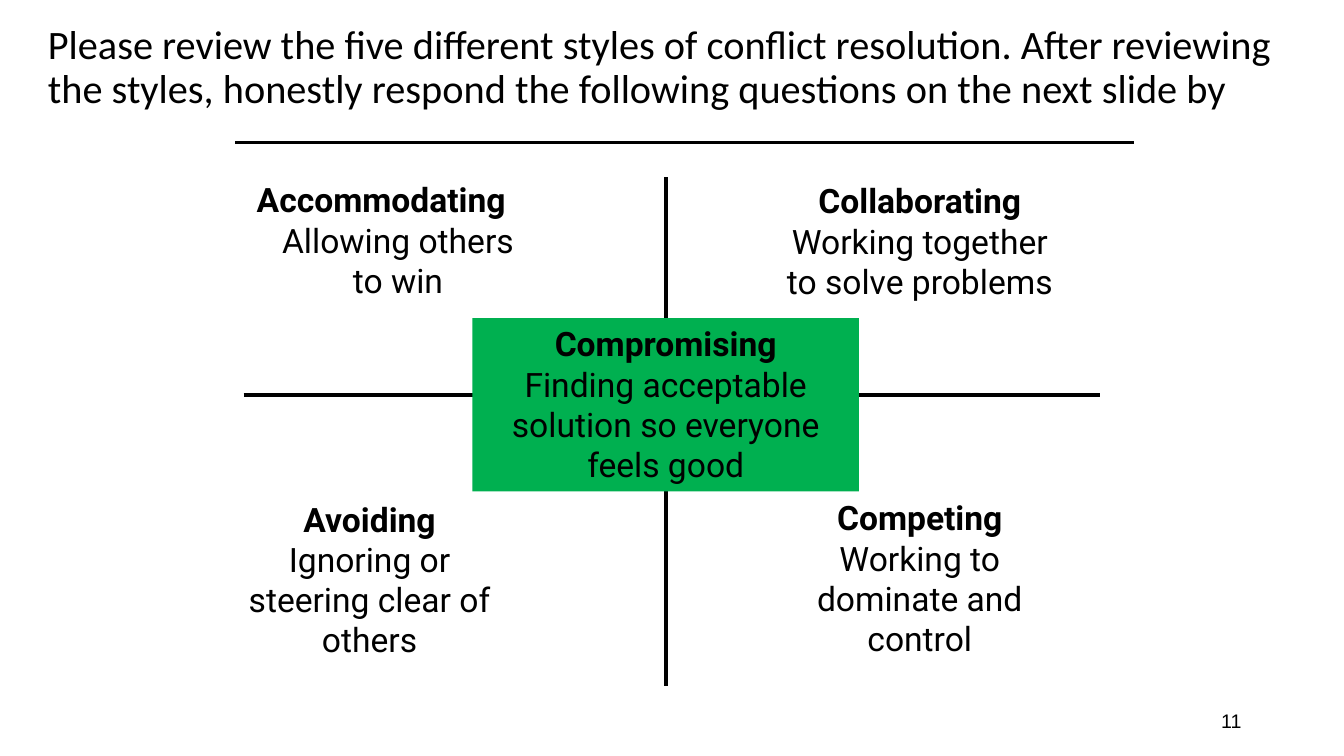
from dataclasses import dataclass

from lxml import etree
from pptx import Presentation
from pptx.dml.color import RGBColor
from pptx.enum.shapes import MSO_CONNECTOR, MSO_SHAPE
from pptx.enum.text import MSO_ANCHOR, MSO_AUTO_SIZE, PP_ALIGN
from pptx.oxml.ns import qn
from pptx.util import Pt

PX = 9525
LEFT, CENTER, RIGHT = PP_ALIGN.LEFT, PP_ALIGN.CENTER, PP_ALIGN.RIGHT
TOP, MIDDLE = MSO_ANCHOR.TOP, MSO_ANCHOR.MIDDLE
NO_FIT, GROW = MSO_AUTO_SIZE.NONE, MSO_AUTO_SIZE.SHAPE_TO_FIT_TEXT
STRAIGHT, RECTANGLE = MSO_CONNECTOR.STRAIGHT, MSO_SHAPE.RECTANGLE


@dataclass(frozen=True)
class Theme:
    ink = RGBColor(0x00, 0x00, 0x00)
    compromise = RGBColor(0x00, 0xB0, 0x50)
    title_font, title_size = "Calibri", Pt(28.8)
    style_font, style_size = "Roboto", Pt(24)
    number_font, number_size = "Arial", Pt(14)
    rule_width, axis_width = Pt(2.25), Pt(3)


THEME = Theme()


def px(*lengths):
    return [length * PX for length in lengths]


def prepare_frame(frame, anchor, fit):
    frame.word_wrap = True
    frame.vertical_anchor = anchor
    frame.auto_size = fit


def format_paragraph(paragraph, font, size, align, bold=False):
    paragraph.alignment = align
    paragraph.font.name = font
    paragraph.font.size = size
    paragraph.font.bold = bold
    paragraph.font.color.rgb = THEME.ink


def add_line(slide, start, end, width):
    line = slide.shapes.add_connector(STRAIGHT, *px(*start, *end))
    line.line.color.rgb = THEME.ink
    line.line.width = width
    etree.SubElement(line._element.spPr, qn("a:effectLst"))


def write_style(shape, name, meaning, name_align=CENTER):
    """Fill a shape with a bold style name and the lines that explain it."""
    frame = shape.text_frame
    prepare_frame(frame, TOP, GROW)
    frame.text = "\n".join([name, *meaning])
    for index, paragraph in enumerate(frame.paragraphs):
        is_name = index == 0
        format_paragraph(paragraph, THEME.style_font, THEME.style_size,
                         name_align if is_name else CENTER, is_name)


def fill_title(slide, box):
    title = slide.shapes.title
    title.left, title.top, title.width, title.height = px(*box)
    title.text = ("Please review the five different styles of conflict resolution. "
                  "After reviewing the styles, honestly respond the following "
                  "questions on the next slide by")
    prepare_frame(title.text_frame, MIDDLE, NO_FIT)
    paragraph = title.text_frame.paragraphs[0]
    format_paragraph(paragraph, THEME.title_font, THEME.title_size, LEFT)
    paragraph.line_spacing = 0.9


def add_page_number(slide, box):
    number = slide.shapes.add_textbox(*px(*box))
    number.text_frame.text = "11"
    prepare_frame(number.text_frame, MIDDLE, NO_FIT)
    format_paragraph(number.text_frame.paragraphs[0],
                     THEME.number_font, THEME.number_size, RIGHT)


def add_style_matrix(slide, box):
    """Draw the two axes, a style in each quadrant and one over the crossing."""
    left, top, width, height = box
    axis_x, axis_y = left + 402, top + 207
    add_line(slide, (axis_x, top), (axis_x, top + height), THEME.axis_width)
    add_line(slide, (left, axis_y), (left + width, axis_y), THEME.axis_width)

    quadrants = [
        (3, -3, 126, "Accommodating", ["Allowing others", "to win"], LEFT),
        (-24, 301, 165, "Avoiding", ["Ignoring or steering clear of others"], CENTER),
        (500, -2, 126, "Collaborating", ["Working together to solve problems"], CENTER),
        (500, 300, 165, "Competing", ["Working to dominate and control"], CENTER),
    ]
    for x, y, tall, name, meaning, name_align in quadrants:
        quadrant = slide.shapes.add_textbox(*px(left + x, top + y, 288, tall))
        write_style(quadrant, name, meaning, name_align)

    compromise = slide.shapes.add_shape(
        RECTANGLE, *px(axis_x - 184, axis_y - 73, 368, 165))
    compromise.shadow.inherit = False
    compromise.fill.solid()
    compromise.fill.fore_color.rgb = THEME.compromise
    compromise.line.fill.background()
    write_style(compromise, "Compromising",
                ["Finding acceptable solution so everyone feels good"])


def main():
    deck = Presentation()
    deck.slide_width, deck.slide_height = px(1280, 720)
    slide = deck.slides.add_slide(deck.slide_layouts[5])
    fill_title(slide, (36, 13, 1244, 104))
    add_page_number(slide, (904, 667, 288, 38))
    add_line(slide, (224, 136), (1080, 136), THEME.rule_width)
    add_style_matrix(slide, (232, 169, 816, 484))
    deck.save("out.pptx")


if __name__ == "__main__":
    main()
